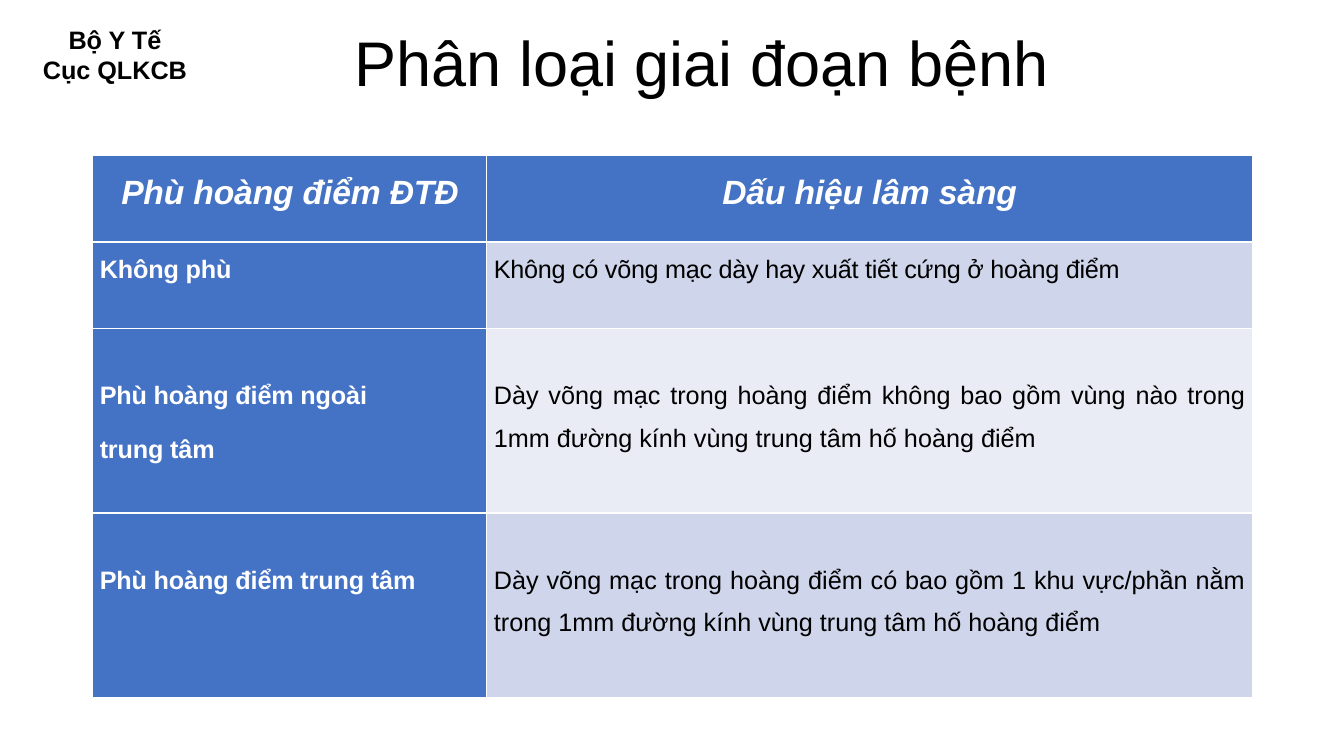
from pptx import Presentation
from pptx.dml.color import RGBColor
from pptx.enum.text import MSO_ANCHOR as Anchor, MSO_AUTO_SIZE as AutoSize, PP_ALIGN as Align
from pptx.util import Inches, Pt

BLACK = RGBColor(0x00, 0x00, 0x00)
WHITE = RGBColor(0xFF, 0xFF, 0xFF)
BLUE = RGBColor(0x44, 0x72, 0xC4)
BAND_DARK = RGBColor(0xCF, 0xD5, 0xEA)
BAND_LIGHT = RGBColor(0xE9, 0xEB, 0xF5)

HEADING = dict(size=Pt(24), bold=True, italic=True)
STAGE = dict(size=Pt(18), bold=True, italic=False)
SIGN = dict(size=Pt(18), bold=False, italic=False)
CELL_SPACING = dict(line_spacing=1.5, space_after=Pt(8))
LOWERED = Inches(0.39)

# Each row: height share, top margin, sign tracking, stage lines, clinical sign
STAGES = [
    (11.47, 0, -20, ["Không phù"],
     "Không có võng mạc dày hay xuất tiết cứng ở hoàng điểm"),
    (24.4, LOWERED, 0, ["Phù hoàng điểm ngoài", "trung tâm"],
     "Dày võng mạc trong hoàng điểm không bao gồm vùng nào trong "
     "1mm đường kính vùng trung tâm hố hoàng điểm"),
    (24.4, LOWERED, 0, ["Phù hoàng điểm trung tâm"],
     "Dày võng mạc trong hoàng điểm có bao gồm 1 khu vực/phần nằm "
     "trong 1mm đường kính vùng trung tâm hố hoàng điểm"),
]


class StageSlide:
    """Holds the style and the slide; lengths are percent of the slide's size."""

    font_name = "Arial"

    def __init__(self, deck):
        self.width, self.height = deck.slide_width, deck.slide_height
        self.slide = deck.slides.add_slide(deck.slide_layouts[5])

    def across(self, share):
        return round(self.width * share / 100)

    def down(self, share):
        return round(self.height * share / 100)

    def area(self, left, top, width, height):
        return self.across(left), self.down(top), self.across(width), self.down(height)

    def fill_text(self, frame, lines, color, font, spacing, tracking=0):
        for index, line in enumerate(lines):
            paragraph = frame.paragraphs[0] if index == 0 else frame.add_paragraph()
            for name, value in spacing.items():
                setattr(paragraph, name, value)
            run = paragraph.add_run()
            run.text = line
            run.font.name = self.font_name
            run.font.color.rgb = color
            for name, value in font.items():
                setattr(run.font, name, value)
            if tracking:
                run.font._element.set("spc", str(tracking))

    def title(self, text, *area):
        heading = self.slide.shapes.title
        heading.left, heading.top, heading.width, heading.height = self.area(*area)
        frame = heading.text_frame
        frame.auto_size = AutoSize.NONE
        frame.vertical_anchor = Anchor.BOTTOM
        self.fill_text(frame, [text], BLACK, dict(size=Pt(45), bold=False),
                       dict(alignment=Align.CENTER, line_spacing=0.9))

    def label(self, lines, *area):
        frame = self.slide.shapes.add_textbox(*self.area(*area)).text_frame
        frame.word_wrap = True
        self.fill_text(frame, lines, BLACK, dict(size=Pt(18), bold=True),
                       dict(alignment=Align.CENTER))

    def table(self, left, top, columns, rows):
        area = self.area(left, top, sum(columns), sum(rows))
        grid = self.slide.shapes.add_table(len(rows), len(columns), *area).table
        grid.first_col = True
        for column, share in zip(grid.columns, columns):
            column.width = self.across(share)
        for row, share in zip(grid.rows, rows):
            row.height = self.down(share)
        return grid

    def cell(self, cell, lines, fill, color, font, alignment, tracking, top=0):
        margins = dict(margin_left=Inches(0.07), margin_right=Inches(0.07),
                       margin_top=top, margin_bottom=0)
        for name, value in margins.items():
            setattr(cell, name, value)
        cell.fill.solid()
        cell.fill.fore_color.rgb = fill
        self.fill_text(cell.text_frame, lines, color, font,
                       dict(CELL_SPACING, alignment=alignment), tracking)


def main():
    deck = Presentation()
    deck.slide_width, deck.slide_height = Inches(13.33), Inches(7.5)
    page = StageSlide(deck)

    # Title and agency
    page.title("Phân loại giai đoạn bệnh", 14.7, 3.6, 75, 10.27)
    page.label(["Bộ Y Tế", "Cục QLKCB"], 0.98, 2.53, 15.15, 9.47)

    # Table header
    heights = [11.47] + [stage[0] for stage in STAGES]
    grid = page.table(6.9, 20.53, [29.33, 56.94], heights)
    for column, heading in enumerate(["Phù hoàng điểm ĐTĐ", "Dấu hiệu lâm sàng"]):
        page.cell(grid.cell(0, column), [heading], BLUE, WHITE, HEADING, Align.CENTER, -10)

    # Stages with their clinical signs
    for row, (_, top, tracking, stage, sign) in enumerate(STAGES, 1):
        band = BAND_DARK if row % 2 else BAND_LIGHT
        page.cell(grid.cell(row, 0), stage, BLUE, WHITE, STAGE, Align.LEFT, -10, top)
        page.cell(grid.cell(row, 1), [sign], band, BLACK, SIGN, Align.JUSTIFY, tracking, top)

    deck.save("out.pptx")


if __name__ == "__main__":
    main()
